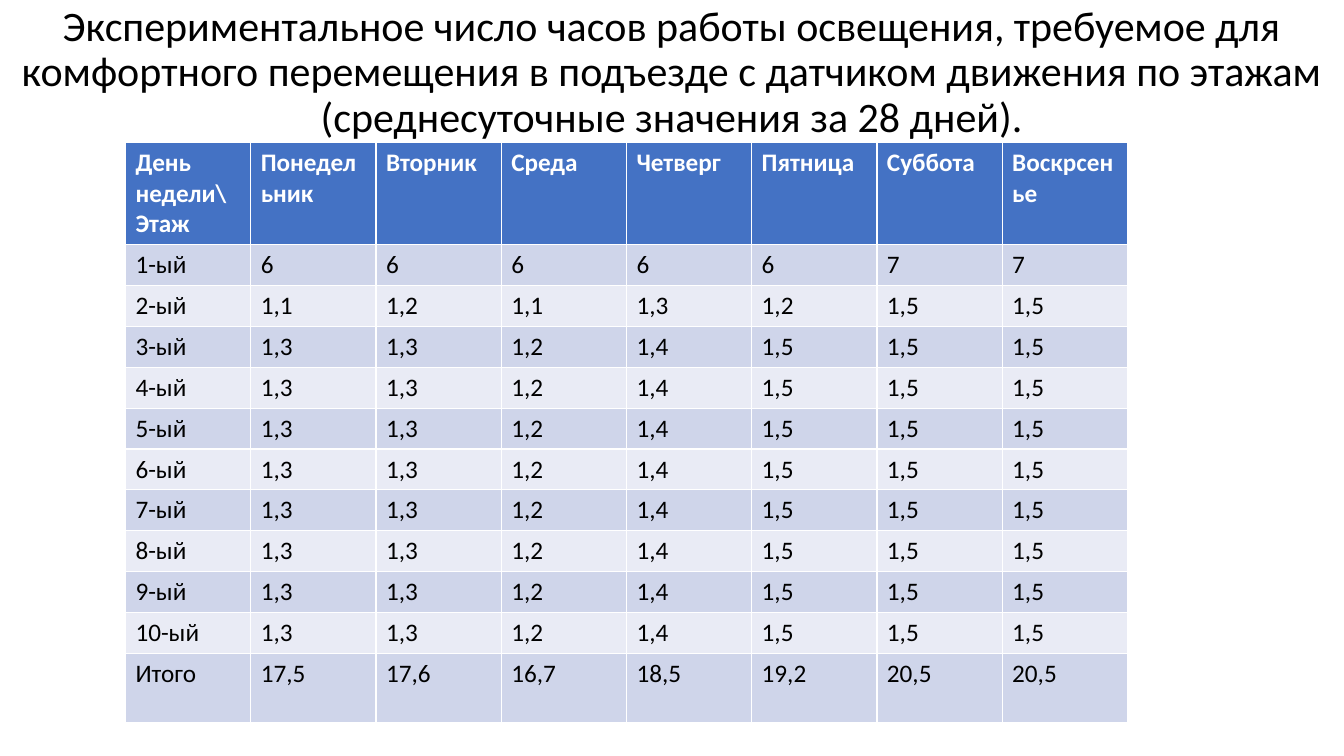
from dataclasses import dataclass

from pptx import Presentation
from pptx.dml.color import RGBColor
from pptx.enum import text
from pptx.util import Pt

TITLE = (
    "Экспериментальное число часов работы освещения, требуемое для "
    "комфортного перемещения в подъезде c датчиком движения по этажам "
    "(среднесуточные значения за 28 дней)."
)
HEADER = ["День недели\\ Этаж", "Понедельник", "Вторник", "Среда", "Четверг",
          "Пятница", "Суббота", "Воскрсенье"]
FIRST_FLOOR = ["6", "6", "6", "6", "6", "7", "7"]
SECOND_FLOOR = ["1,1", "1,2", "1,1", "1,3", "1,2", "1,5", "1,5"]
UPPER_FLOOR = ["1,3", "1,3", "1,2", "1,4", "1,5", "1,5", "1,5"]
TOTAL = ["17,5", "17,6", "16,7", "18,5", "19,2", "20,5", "20,5"]

FLOORS = [FIRST_FLOOR, SECOND_FLOOR] + [UPPER_FLOOR] * 8
ROWS = [
    HEADER,
    *([f"{number}-ый", *hours] for number, hours in enumerate(FLOORS, 1)),
    ["Итого", *TOTAL],
]

SLIDE_WIDTH, SLIDE_HEIGHT = 960, 540
TITLE_HEIGHT = 104.4
TABLE_LEFT, TABLE_TOP = 89.6, 101.6
TABLE_WIDTH, TABLE_HEIGHT = 715.7, 414.7
HEADER_HEIGHT, FLOOR_HEIGHT = 73.1, 29.2


@dataclass(frozen=True)
class Theme:
    font: str = "Calibri"
    title_size: int = 30
    table_size: int = 18
    dark: str = "000000"
    light: str = "FFFFFF"
    header: str = "4472C4"
    bands: tuple = ("E9EBF5", "CFD5EA")


THEME = Theme()


def write(frame, content, size, color=THEME.dark, bold=False, align=None, spacing=None):
    paragraph = frame.paragraphs[0]
    paragraph.alignment = align
    paragraph.line_spacing = spacing
    run = paragraph.add_run()
    run.text = content
    run.font.name = THEME.font
    run.font.size = Pt(size)
    run.font.bold = bold
    run.font.color.rgb = RGBColor.from_string(color)


def add_title(slide):
    title = slide.shapes.title
    title.left, title.top = Pt(0), Pt(0)
    title.width, title.height = Pt(SLIDE_WIDTH), Pt(TITLE_HEIGHT)
    frame = title.text_frame
    frame.auto_size = text.MSO_AUTO_SIZE.NONE
    frame.word_wrap = True
    frame.vertical_anchor = text.MSO_ANCHOR.MIDDLE
    write(frame, TITLE, THEME.title_size, align=text.PP_ALIGN.CENTER, spacing=0.9)


def add_hours_table(slide):
    table = slide.shapes.add_table(
        len(ROWS), len(HEADER), Pt(TABLE_LEFT), Pt(TABLE_TOP),
        Pt(TABLE_WIDTH), Pt(TABLE_HEIGHT),
    ).table
    for column in table.columns:
        column.width = Pt(TABLE_WIDTH / len(HEADER))

    total_height = TABLE_HEIGHT - HEADER_HEIGHT - FLOOR_HEIGHT * len(FLOORS)
    heights = [HEADER_HEIGHT, *[FLOOR_HEIGHT] * len(FLOORS), total_height]
    for index, (height, values) in enumerate(zip(heights, ROWS)):
        table.rows[index].height = Pt(height)
        is_header = index == 0
        fill = THEME.header if is_header else THEME.bands[index % 2]
        color = THEME.light if is_header else THEME.dark
        for cell, value in zip(table.rows[index].cells, values):
            cell.fill.solid()
            cell.fill.fore_color.rgb = RGBColor.from_string(fill)
            write(cell.text_frame, value, THEME.table_size, color=color, bold=is_header)


def main():
    presentation = Presentation()
    presentation.slide_width = Pt(SLIDE_WIDTH)
    presentation.slide_height = Pt(SLIDE_HEIGHT)
    slide = presentation.slides.add_slide(presentation.slide_layouts[5])
    add_title(slide)
    add_hours_table(slide)
    presentation.save("out.pptx")


if __name__ == "__main__":
    main()
